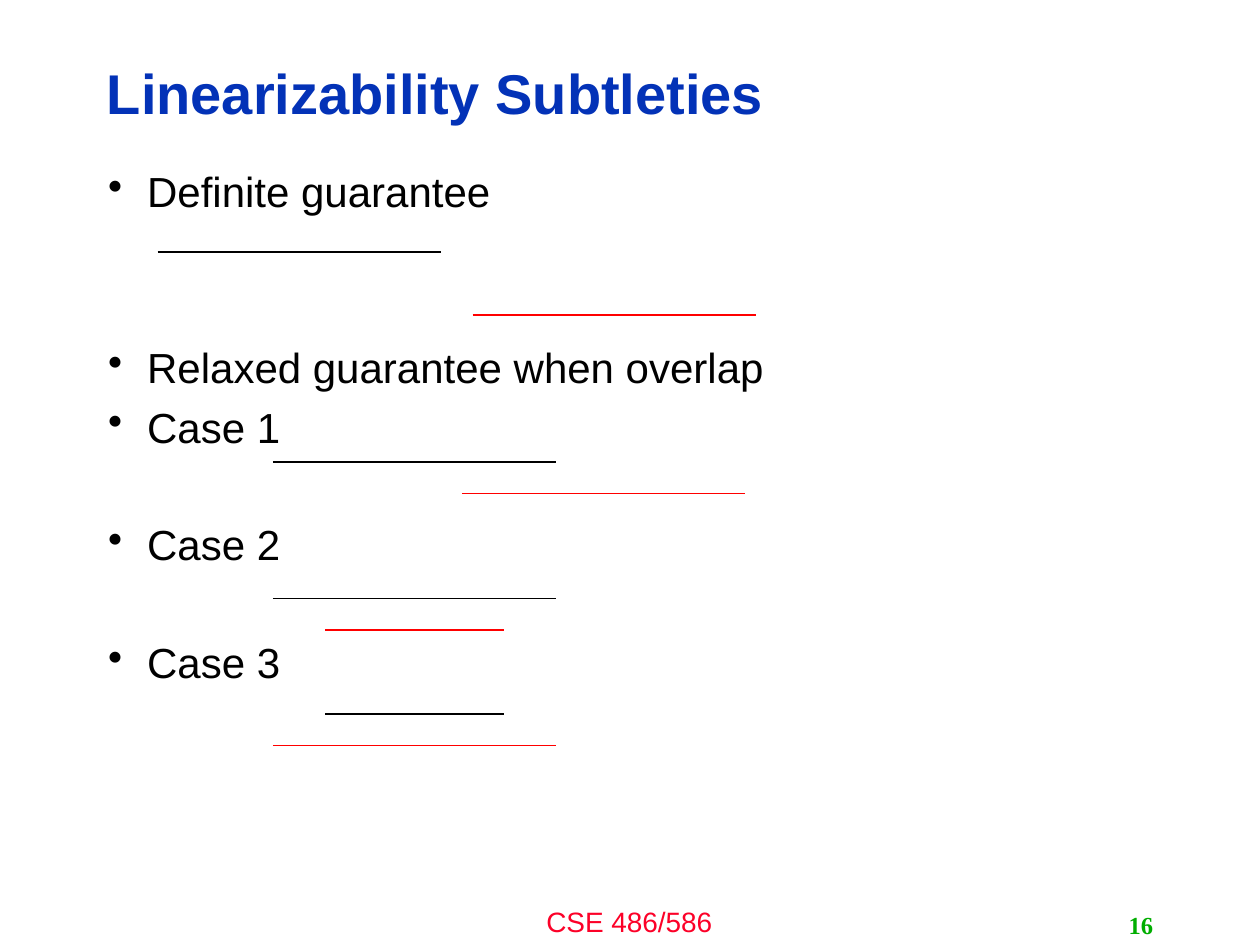
from lxml import etree
from pptx import Presentation, util as u
from pptx.dml.color import RGBColor
from pptx.enum import shapes, text
from pptx.oxml.ns import qn

BLACK = RGBColor(0x00, 0x00, 0x00)
RED = RGBColor(0xFF, 0x00, 0x00)
BLUE = RGBColor(0x03, 0x32, 0xB7)
CRIMSON = RGBColor(0xFC, 0x01, 0x28)
GREEN = RGBColor(0x00, 0xAE, 0x00)

GRID_UNIT = u.Inches(10) / 120
LINE_PITCH = 33.12
PARA_GAP = 8.28

BULLETS = [
    ("Definite guarantee", 0),
    ("Relaxed guarantee when overlap", 2),
    ("Case 1", 0),
    ("Case 2", 1),
    ("Case 3", 1),
]

INTERVAL_PAIRS = [
    ((15, 24, 27), (45, 30, 27)),
    ((26, 44, 27), (44, 47, 27)),
    ((26, 57, 27), (31, 60, 17)),
    ((31, 68, 17), (26, 71, 27)),
]


def add_text_frame(page, box, anchor=text.MSO_ANCHOR.TOP, wrap=True):
    frame = page.shapes.add_textbox(*(u.Inches(side) for side in box)).text_frame
    frame.word_wrap = wrap
    frame.vertical_anchor = anchor
    return frame


def write(para, words, size, color, face="Arial", bold=False):
    para.text = words
    font = para.font
    font.name, font.size, font.bold = face, u.Pt(size), bold
    font.color.rgb = color


def add_title(page, box):
    para = add_text_frame(page, box, text.MSO_ANCHOR.MIDDLE).paragraphs[0]
    write(para, "Linearizability Subtleties", 32, BLUE, bold=True)
    para.line_spacing = 0.9


def add_bullets(page, box):
    frame = add_text_frame(page, box)
    for index, (words, skipped_lines) in enumerate(BULLETS):
        para = frame.add_paragraph() if index else frame.paragraphs[0]
        write(para, words, 24, BLACK)
        para.line_spacing = 0.9
        para.space_before = u.Pt(PARA_GAP + skipped_lines * LINE_PITCH)
        props = para._p.get_or_add_pPr()
        props.set("marL", str(u.Inches(0.31)))
        props.set("indent", str(u.Inches(-0.31)))
        bullet = etree.Element(qn("a:buChar"), char="•")
        props.find(qn("a:defRPr")).addprevious(bullet)


def add_interval(page, column, row, columns, color):
    left, right, y = (round(n * GRID_UNIT) for n in (column, column + columns, row))
    line = page.shapes.add_connector(shapes.MSO_CONNECTOR.STRAIGHT, left, y, right, y)
    line.line.color.rgb = color
    line.line.width = u.Pt(1)
    etree.SubElement(line._element.spPr, qn("a:effectLst"))


def add_footer(page, box):
    para = add_text_frame(page, box).paragraphs[0]
    write(para, "CSE 486/586", 16, CRIMSON)
    para.alignment = text.PP_ALIGN.CENTER


def add_page_number(page, box):
    para = add_text_frame(page, box, text.MSO_ANCHOR.MIDDLE).paragraphs[0]
    write(para, "16", 14, GREEN, "Times New Roman", True)
    para.alignment = text.PP_ALIGN.RIGHT


def main():
    deck = Presentation()
    deck.slide_width, deck.slide_height = u.Inches(10), u.Inches(7.5)
    page = deck.slides.add_slide(deck.slide_layouts[6])
    add_footer(page, (3.33, 7.13, 3.33, 0.37))
    add_title(page, (0.75, 0.36, 7.98, 0.81))
    add_bullets(page, (0.76, 1.31, 8.4, 5.39))
    add_page_number(page, (7.17, 7.18, 2.08, 0.32))
    for first, second in INTERVAL_PAIRS:
        add_interval(page, *first, BLACK)
        add_interval(page, *second, RED)
    deck.save("out.pptx")


if __name__ == "__main__":
    main()
